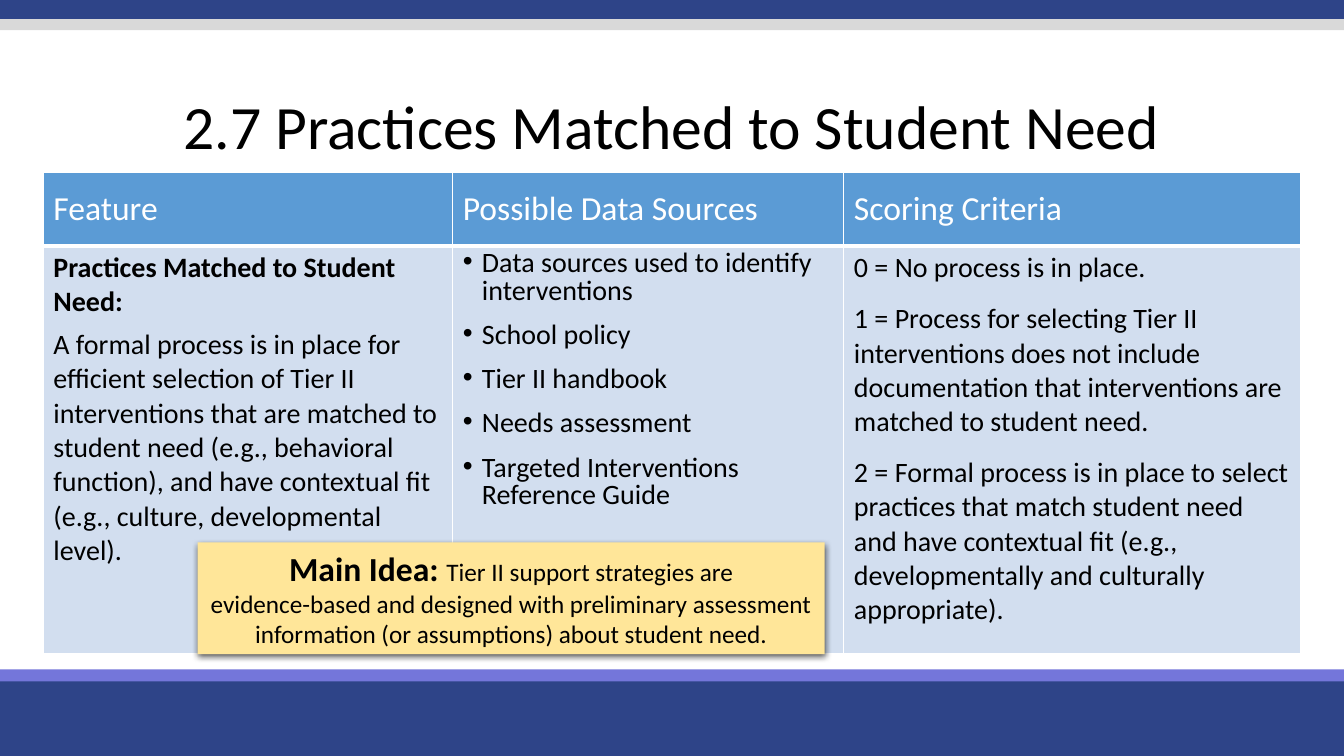
from lxml.etree import SubElement
from pptx import Presentation
from pptx.dml.color import RGBColor
from pptx.enum.shapes import MSO_SHAPE
from pptx.enum.text import MSO_ANCHOR, PP_ALIGN
from pptx.oxml.ns import qn
from pptx.util import Pt

EMU_PER_PX = 9144  # 100 px to the inch
FONT = "Calibri"
BLACK, WHITE = "000000", "FFFFFF"
NAVY, VIOLET, GRAY = "2E4488", "7476DA", "D9D9D9"
HEADER_BLUE, BODY_BLUE, YELLOW = "5B9BD5", "D2DEEF", "FFE699"


def px(length):
    return length * EMU_PER_PX


def color(hex_value):
    return RGBColor.from_string(hex_value)


class SlideBuilder:
    def __init__(self, slide):
        self.slide = slide
        self.shapes = slide.shapes

    def style_run(self, run, size, hex_value=BLACK, bold=False):
        run.font.name = FONT
        run.font.size = Pt(size)
        run.font.bold = bold
        run.font.color.rgb = color(hex_value)

    def fill_text(self, text_frame, lines, size, hex_value=BLACK, align=PP_ALIGN.LEFT,
                  spacing=None, after=0, bullet=False):
        text_frame.text = "\n".join(lines)
        text_frame.word_wrap = True
        for paragraph in text_frame.paragraphs:
            if bullet:
                self.add_bullet(paragraph)
            paragraph.alignment = align
            if spacing:
                paragraph.line_spacing = spacing
            if after and paragraph.text != lines[-1]:
                paragraph.space_after = Pt(after)
            for run in paragraph.runs:
                self.style_run(run, size, hex_value)

    def add_bullet(self, paragraph):
        properties = paragraph._p.get_or_add_pPr()
        properties.set("marL", str(px(19)))
        properties.set("indent", str(px(-19)))
        SubElement(properties, qn("a:buFont"), typeface="Arial")
        SubElement(properties, qn("a:buChar"), char="•")

    def rectangle(self, left, top, width, height, fill):
        shape = self.shapes.add_shape(MSO_SHAPE.RECTANGLE, px(left), px(top),
                                      px(width), px(height))
        shape.shadow.inherit = False
        shape.fill.solid()
        shape.fill.fore_color.rgb = color(fill)
        shape.line.fill.background()
        return shape

    def add_shadow(self, shape):
        effects = shape._element.spPr.find(qn("a:effectLst"))
        shadow = SubElement(effects, qn("a:outerShdw"), blurRad=str(Pt(4.5)),
                            dist=str(Pt(1.5)), dir="5400000", rotWithShape="0")
        shade = SubElement(shadow, qn("a:srgbClr"), val=BLACK)
        SubElement(shade, qn("a:alpha"), val="63000")

    def title(self, left, top, width, height, text):
        box = self.shapes.add_textbox(px(left), px(top), px(width), px(height))
        box.text_frame.vertical_anchor = MSO_ANCHOR.MIDDLE
        self.fill_text(box.text_frame, [text], 44, align=PP_ALIGN.CENTER, spacing=0.9)

    def table(self, left, top, column_widths, row_heights):
        frame = self.shapes.add_table(len(row_heights), len(column_widths), px(left), px(top),
                                      px(sum(column_widths)), px(sum(row_heights)))
        table = frame.table
        for column, width in zip(table.columns, column_widths):
            column.width = px(width)
        for row, height in zip(table.rows, row_heights):
            row.height = px(height)
        return table

    def style_cell(self, cell, fill, bottom_width=1):
        properties = cell._tc.get_or_add_tcPr()
        for side in ("lnL", "lnR", "lnT", "lnB"):
            width = bottom_width if side == "lnB" else 1
            line = SubElement(properties, qn(f"a:{side}"), w=str(Pt(width)))
            SubElement(SubElement(line, qn("a:solidFill")), qn("a:srgbClr"), val=WHITE)
        cell.fill.solid()
        cell.fill.fore_color.rgb = color(fill)


def main():
    presentation = Presentation()
    presentation.slide_width, presentation.slide_height = px(1333), px(750)
    builder = SlideBuilder(presentation.slides.add_slide(presentation.slide_layouts[6]))

    # Bands along the top and bottom edges
    for top, height, fill in ((670, 80, NAVY), (664, 12, VIOLET), (-3, 22, NAVY), (19, 11, GRAY)):
        builder.rectangle(0, top, 1333, height, fill)

    builder.title(0, 69, 1333, 118, "2.7 Practices Matched to Student Need")

    # Scoring table
    table = builder.table(43, 171, (406, 388, 453), (73, 404))
    columns = (
        ("Feature", {"after": 6}, [
            "Practices Matched to Student Need:",
            "A formal process is in place for efficient selection of Tier II interventions that are "
            "matched to student need (e.g., behavioral function), and have contextual fit "
            "(e.g., culture, developmental level).",
        ]),
        ("Possible Data Sources", {"after": 12, "spacing": 0.8, "bullet": True}, [
            "Data sources used to identify interventions",
            "School policy",
            "Tier II handbook",
            "Needs assessment",
            "Targeted Interventions Reference Guide",
        ]),
        ("Scoring Criteria", {"after": 12}, [
            "0 = No process is in place.",
            "1 = Process for selecting Tier II interventions does not include documentation that "
            "interventions are matched to student need.",
            "2 = Formal process is in place to select practices that match student need and have "
            "contextual fit (e.g., developmentally and culturally appropriate).",
        ]),
    )
    for index, (heading, layout, lines) in enumerate(columns):
        header, body = table.cell(0, index), table.cell(1, index)
        builder.style_cell(header, HEADER_BLUE, bottom_width=3)
        header.vertical_anchor = MSO_ANCHOR.MIDDLE
        builder.fill_text(header.text_frame, [heading], 24, WHITE)
        builder.style_cell(body, BODY_BLUE)
        builder.fill_text(body.text_frame, lines, 20, **layout)
    feature_name = table.cell(1, 0).text_frame.paragraphs[0]
    feature_name.runs[0].font.bold = True

    # Main idea callout
    callout = builder.rectangle(196, 538, 622, 111, YELLOW)
    builder.add_shadow(callout)
    callout.text_frame.vertical_anchor = MSO_ANCHOR.MIDDLE
    builder.fill_text(callout.text_frame, [
        "Main Idea: ",
        "evidence-based and designed with preliminary assessment information "
        "(or assumptions) about student need.",
    ], 18, align=PP_ALIGN.CENTER)
    opening = callout.text_frame.paragraphs[0]
    builder.style_run(opening.runs[0], 24, bold=True)
    strategies = opening.add_run()
    strategies.text = "Tier II support strategies are"
    builder.style_run(strategies, 18)

    presentation.save("out.pptx")


if __name__ == "__main__":
    main()
